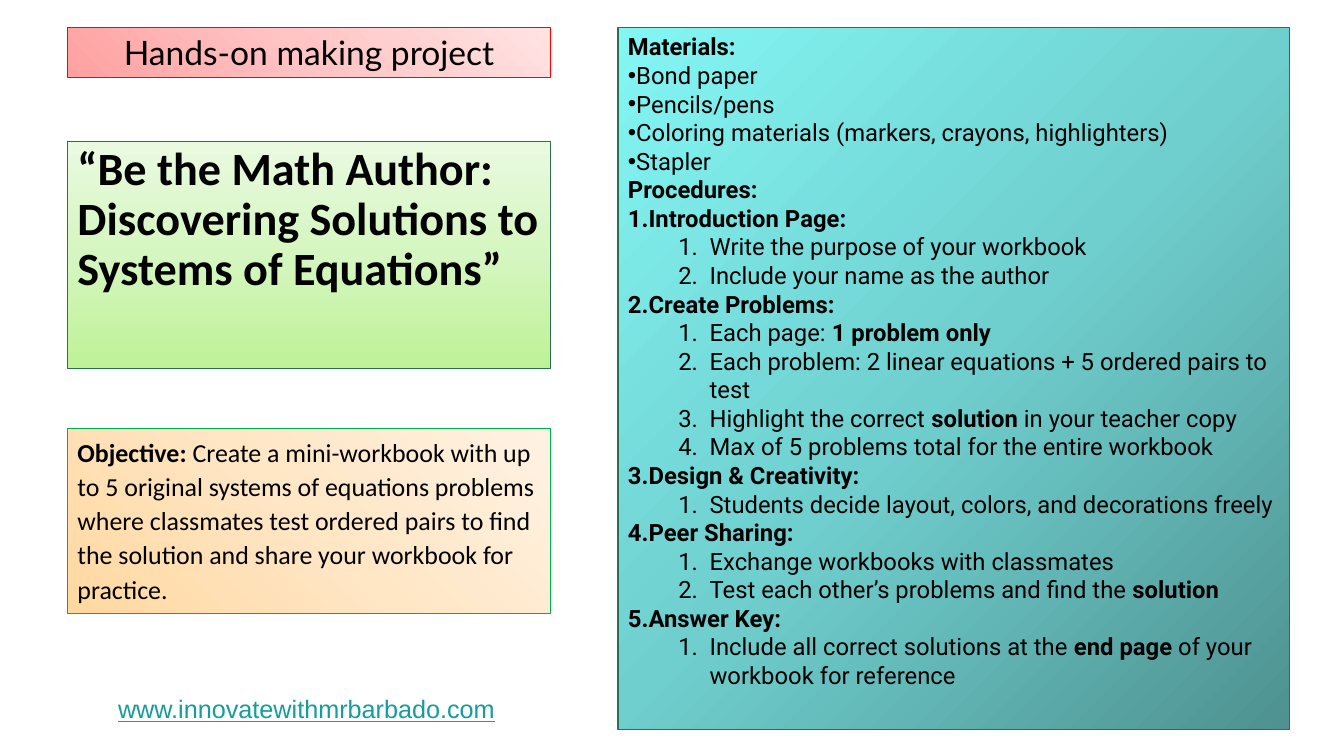
from pptx import Presentation
from pptx.dml.color import RGBColor
from pptx.enum.shapes import MSO_SHAPE
from pptx.enum.text import MSO_ANCHOR, PP_ALIGN
from pptx.oxml import parse_xml
from pptx.oxml.ns import nsdecls, qn
from pptx.util import Inches, Pt

RECTANGLE = MSO_SHAPE.RECTANGLE
TOP = MSO_ANCHOR.TOP
LEFT = PP_ALIGN.LEFT
CENTER = PP_ALIGN.CENTER

BLACK = RGBColor(0x00, 0x00, 0x00)
PINE = RGBColor(0x2E, 0x6C, 0x56)
GREEN = RGBColor(0x00, 0xB0, 0x50)
RED = RGBColor(0xFF, 0x00, 0x00)
TEAL = RGBColor(0x16, 0x9C, 0x9A)
LIME_SHADES = [RGBColor.from_string(shade) for shade in ("BEF297", "D5F6C0", "EAFAE0")]
PEACH_SHADES = [RGBColor.from_string(shade) for shade in ("FFD8A0", "FFE6C5", "FFF2E3")]
AQUA_SHADES = [RGBColor.from_string(shade) for shade in ("4E9291", "6FCFCE", "83F6F4")]
PINK_SHADES = [RGBColor.from_string(shade) for shade in ("FFA0A0", "FFC5C5", "FFE3E3")]

UPWARD = '<a:lin ang="16200000" scaled="0"/>'
DIAGONAL = '<a:lin ang="18900000" scaled="0"/>'
FROM_CORNER = '<a:path path="circle"><a:fillToRect l="100000" t="100000"/></a:path>'

COLUMN_LEFT, COLUMN_WIDTH = 0.67, 4.79

MATERIALS = [
    "Bond paper",
    "Pencils/pens",
    "Coloring materials (markers, crayons, highlighters)",
    "Stapler",
]
PROCEDURES = [
    ("Introduction Page:", [
        ["Write the purpose of your workbook"],
        ["Include your name as the author"],
    ]),
    ("Create Problems:", [
        ["Each page: ", "1 problem only"],
        ["Each problem: 2 linear equations + 5 ordered pairs to test"],
        ["Highlight the correct ", "solution", " in your teacher copy"],
        ["Max of 5 problems total for the entire workbook"],
    ]),
    ("Design & Creativity:", [
        ["Students decide layout, colors, and decorations freely"],
    ]),
    ("Peer Sharing:", [
        ["Exchange workbooks with classmates"],
        ["Test each other’s problems and find the ", "solution"],
    ]),
    ("Answer Key:", [
        ["Include all correct solutions at the ", "end page", " of your workbook for reference"],
    ]),
]


class ProjectSlide:
    def __init__(self, slide):
        self.slide = slide

    def panel(self, left, top, width, height, shades, direction, border):
        panel = self.slide.shapes.add_shape(
            RECTANGLE, Inches(left), Inches(top), Inches(width), Inches(height))
        panel.shadow.inherit = False
        panel.line.color.rgb = border
        panel.line.width = Pt(0.75)
        panel.fill.gradient()
        stops = "".join(
            f'<a:gs pos="{index * 50000}"><a:srgbClr val="{shade}"/></a:gs>'
            for index, shade in enumerate(shades))
        gradient = parse_xml(
            f'<a:gradFill {nsdecls("a")} rotWithShape="1">'
            f'<a:gsLst>{stops}</a:gsLst>{direction}</a:gradFill>')
        properties = panel._element.spPr
        properties.replace(properties.find(qn("a:gradFill")), gradient)
        return self.prepare(panel)

    def label(self, left, top, width, height):
        return self.prepare(self.slide.shapes.add_textbox(
            Inches(left), Inches(top), Inches(width), Inches(height)))

    def prepare(self, box):
        frame = box.text_frame
        frame.word_wrap = True
        frame.vertical_anchor = TOP
        return frame

    def paragraph(self, frame, pieces, font, size, first_bold=False, align=LEFT,
                  color=BLACK, bullet=None, level=0, spacing=None, after=0, underline=False):
        paragraph = frame.paragraphs[0]
        if paragraph.runs:
            paragraph = frame.add_paragraph()
        paragraph.alignment = align
        paragraph.level = level
        if bullet:
            properties = paragraph._p.get_or_add_pPr()
            properties.set("marL", str(Inches(0.81 * level)))
            properties.set("indent", str(Inches(-0.31 * level)))
            if bullet == "number":
                mark = f'<a:buAutoNum {nsdecls("a")} type="arabicPeriod"/>'
            else:
                properties.append(parse_xml(f'<a:buFont {nsdecls("a")} typeface="Arial"/>'))
                mark = f'<a:buChar {nsdecls("a")} char="{bullet}"/>'
            properties.append(parse_xml(mark))
        if spacing:
            paragraph.line_spacing = spacing
        paragraph.space_after = Pt(after)
        for index, text in enumerate(pieces):
            run = paragraph.add_run()
            run.text = text
            run.font.name = font
            run.font.size = Pt(size)
            run.font.bold = first_bold if index % 2 == 0 else not first_bold
            run.font.underline = underline
            run.font.color.rgb = color

    def instruction(self, frame, pieces, **style):
        self.paragraph(frame, pieces, "Roboto", 17, **style)


def main():
    deck = Presentation()
    deck.slide_width, deck.slide_height = Inches(13.33), Inches(7.5)
    page = ProjectSlide(deck.slides.add_slide(deck.slide_layouts[6]))

    title = page.panel(COLUMN_LEFT, 1.4, COLUMN_WIDTH, 2.26, LIME_SHADES, UPWARD, PINE)
    page.paragraph(
        title, ["“Be the Math Author: Discovering Solutions to Systems of Equations”"],
        "Calibri", 33, first_bold=True, spacing=0.9)

    objective = page.panel(COLUMN_LEFT, 4.25, COLUMN_WIDTH, 1.84, PEACH_SHADES, DIAGONAL, GREEN)
    page.paragraph(
        objective,
        ["Objective: ",
         "Create a mini-workbook with up to 5 original systems of equations problems where "
         "classmates test ordered pairs to find the solution and share your workbook for practice."],
        "Calibri", 18.5, first_bold=True, spacing=1.1, after=6)

    guide = page.panel(6.13, 0.27, 6.66, 6.97, AQUA_SHADES, FROM_CORNER, PINE)
    page.instruction(guide, ["Materials:"], first_bold=True)
    for material in MATERIALS:
        page.instruction(guide, [material], bullet="•")
    page.instruction(guide, ["Procedures:"], first_bold=True)
    for heading, steps in PROCEDURES:
        page.instruction(guide, [heading], first_bold=True, bullet="number")
        for step in steps:
            page.instruction(guide, step, bullet="number", level=1)

    category = page.panel(COLUMN_LEFT, 0.27, COLUMN_WIDTH, 0.5, PINK_SHADES, DIAGONAL, RED)
    page.paragraph(category, ["Hands-on making project"], "Lato", 24, align=CENTER)

    website = page.label(0.77, 6.83, 4.54, 0.4)
    page.paragraph(website, ["www.innovatewithmrbarbado.com"], "Arial", 18,
                   align=CENTER, color=TEAL, underline=True)

    deck.save("out.pptx")


if __name__ == "__main__":
    main()
